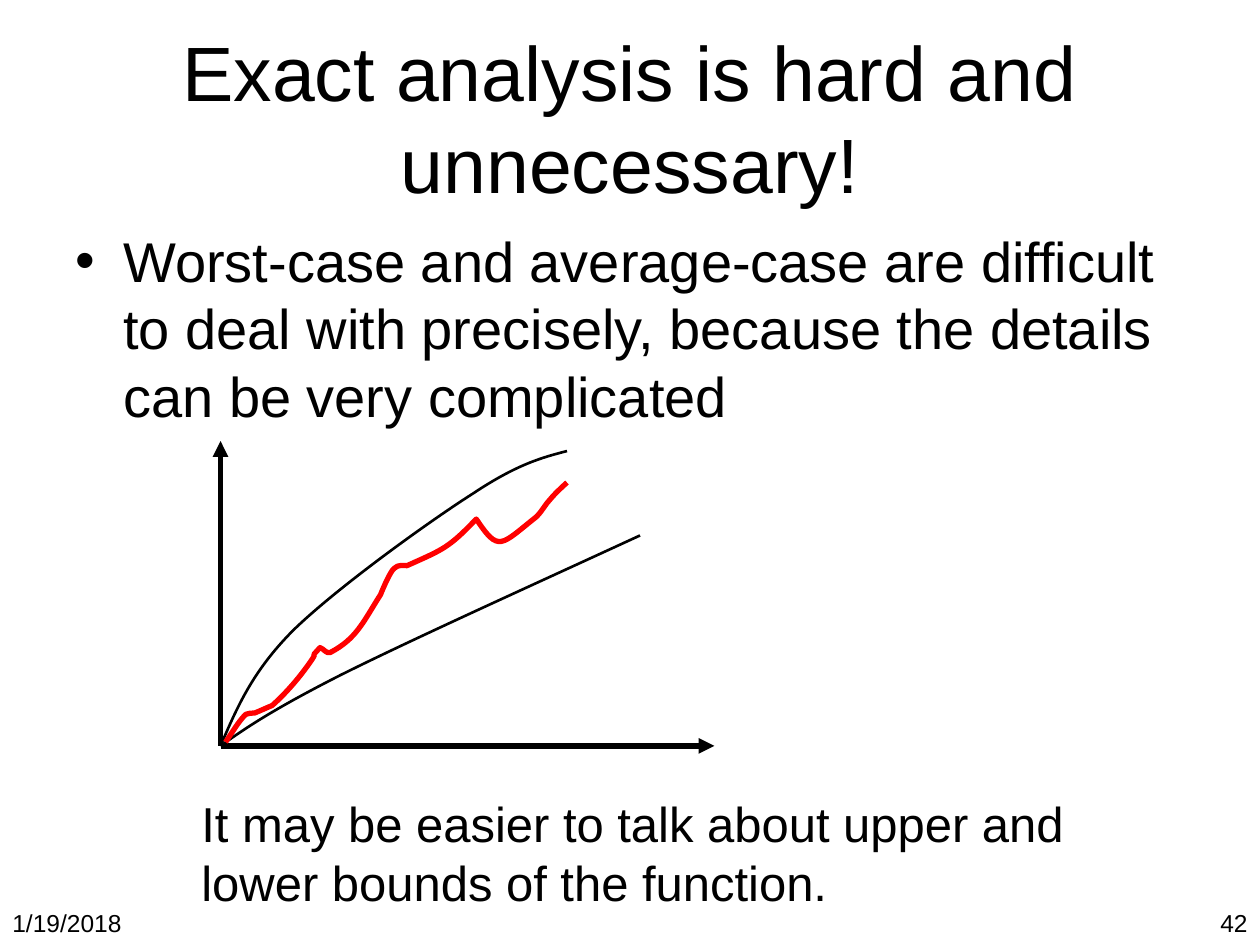
from lxml import etree
from pptx import Presentation
from pptx.dml.color import RGBColor
from pptx.enum import shapes, text
from pptx.oxml.ns import qn
from pptx.util import Inches, Pt

BLACK = RGBColor(0, 0, 0)
RED = RGBColor(255, 0, 0)

prs = Presentation()
prs.slide_width, prs.slide_height = Inches(10), Inches(7.5)
s = prs.slides.add_slide(prs.slide_layouts[6])


def add_text(words, x, y, w, h, size, align=text.PP_ALIGN.LEFT,
             anchor=text.MSO_ANCHOR.TOP, bullet=False):
    tf = s.shapes.add_textbox(Inches(x), Inches(y), Inches(w), Inches(h)).text_frame
    tf.word_wrap = True
    tf.vertical_anchor = anchor
    p = tf.paragraphs[0]
    p.alignment = align
    r = p.add_run()
    r.text = words
    r.font.name, r.font.size = "Arial", Pt(size)
    r.font.color.rgb = BLACK
    if bullet:
        pPr = p._p.get_or_add_pPr()
        pPr.set("marL", str(Inches(0.38)))
        pPr.set("indent", str(-Inches(0.38)))
        etree.SubElement(pPr, qn("a:buFont")).set("typeface", "Arial")
        etree.SubElement(pPr, qn("a:buChar")).set("char", "•")


def add_curve(start, segments, color, width):
    """Draw cubic Bézier segments, each given as two controls and an end."""
    fb = s.shapes.build_freeform(Inches(start[0]), Inches(start[1]))
    fb.add_line_segments([(Inches(c[4]), Inches(c[5])) for c in segments], close=False)
    sp = fb.convert_to_shape()
    sp.shadow.inherit = False
    sp.fill.background()
    sp.line.color.rgb = color
    sp.line.width = Pt(width)
    for line, c in zip(list(sp._element.iter(qn("a:lnTo"))), segments):
        bezier = etree.Element(qn("a:cubicBezTo"))
        for x, y in zip(c[::2], c[1::2]):
            pt = etree.SubElement(bezier, qn("a:pt"))
            pt.set("x", str(Inches(x) - sp.left))
            pt.set("y", str(Inches(y) - sp.top))
        line.getparent().replace(line, bezier)


add_text("1/19/2018", 0, 7.16, 2.33, 0.33, 14)
add_text("42", 7.67, 7.16, 2.33, 0.33, 14, align=text.PP_ALIGN.RIGHT)
add_text("Exact analysis is hard and unnecessary!", 0.5, 0.3, 9, 1.25, 44,
         align=text.PP_ALIGN.CENTER, anchor=text.MSO_ANCHOR.MIDDLE)
add_text("Worst-case and average-case are difficult to deal with precisely, "
         "because the details can be very complicated",
         0.5, 1.75, 9, 4.95, 32, bullet=True)

# Axes
origin = (1.75, 5.92)
for x, y in ((1.75, 3.5), (5.67, 5.92)):
    axis = s.shapes.add_connector(shapes.MSO_CONNECTOR.STRAIGHT, Inches(origin[0]),
                                  Inches(origin[1]), Inches(x), Inches(y))
    axis.line.color.rgb = BLACK
    axis.line.width = Pt(3)
    etree.SubElement(axis.line._get_or_add_ln(), qn("a:tailEnd")).set("type", "triangle")
    etree.SubElement(axis._element.spPr, qn("a:effectLst"))

# Upper bound, lower bound, and the function between them
add_curve(origin, [
    (1.88, 5.62, 2, 5.33, 2.33, 5),
    (2.67, 4.67, 3.39, 4.15, 3.75, 3.92),
    (4.11, 3.68, 4.31, 3.63, 4.5, 3.58),
], BLACK, 1.5)
add_curve(origin, [
    (1.95, 5.78, 2.15, 5.64, 2.7, 5.36),
    (3.26, 5.08, 4.17, 4.67, 5.08, 4.25),
], BLACK, 1.5)
add_curve((1.79, 5.89), [
    (1.84, 5.82, 1.89, 5.73, 1.95, 5.67),
    (1.97, 5.66, 2, 5.66, 2.02, 5.66),
    (2.07, 5.64, 2.11, 5.62, 2.16, 5.6),
    (2.25, 5.52, 2.35, 5.41, 2.43, 5.3),
    (2.57, 5.11, 2.42, 5.27, 2.54, 5.14),
    (2.57, 5.15, 2.59, 5.19, 2.62, 5.18),
    (2.83, 5.07, 2.88, 4.94, 3.02, 4.72),
    (3.04, 4.67, 3.1, 4.53, 3.13, 4.51),
    (3.16, 4.48, 3.2, 4.49, 3.23, 4.49),
    (3.52, 4.36, 3.56, 4.35, 3.78, 4.12),
    (3.96, 4.39, 3.97, 4.33, 4.26, 4.1),
    (4.3, 4.06, 4.33, 4, 4.37, 3.96),
    (4.41, 3.91, 4.5, 3.83, 4.5, 3.83),
], RED, 3)

add_text("It may be easier to talk about upper and lower bounds of the function.",
         1.5, 6.25, 7.83, 1.03, 28)

prs.save("out.pptx")
